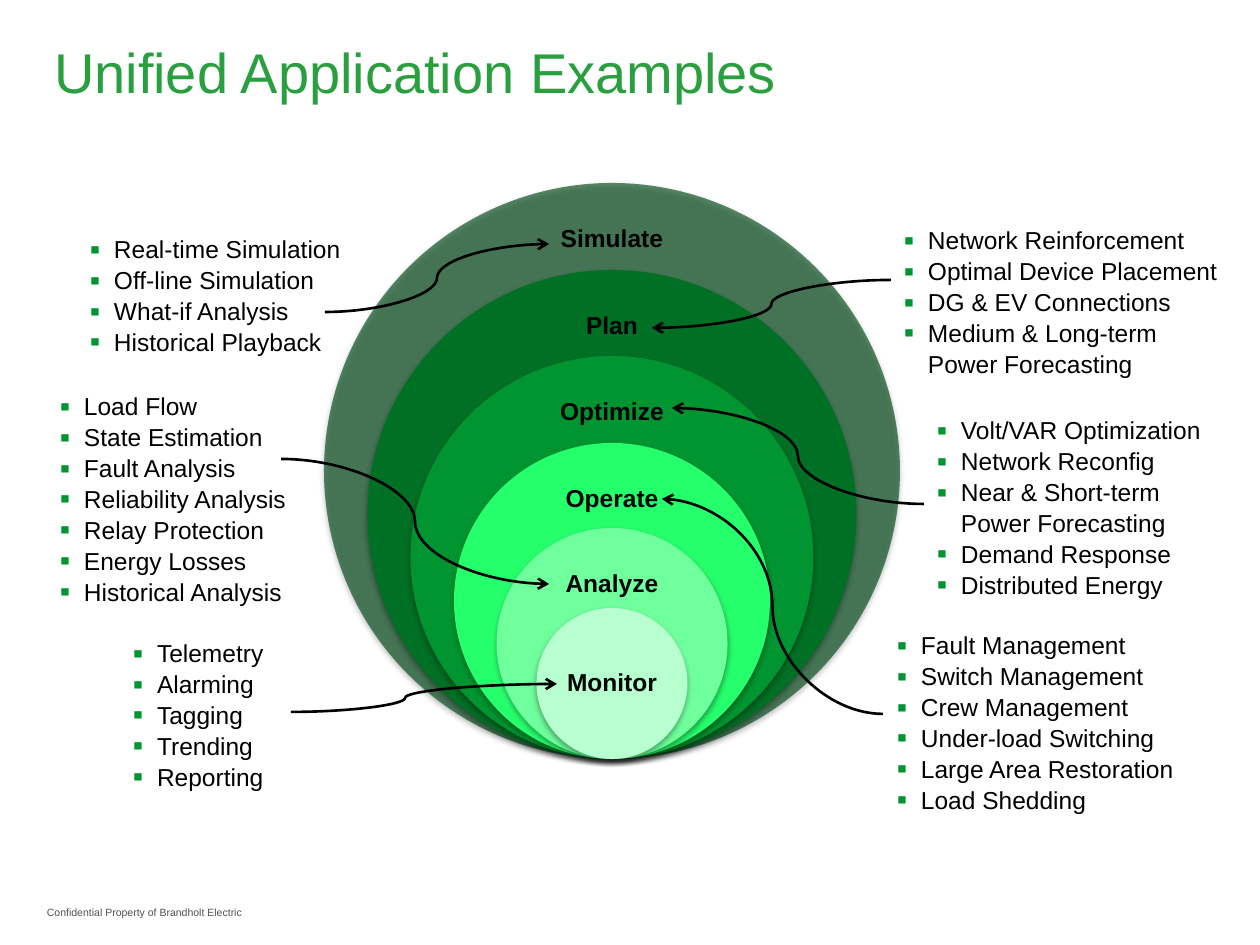
"""Build the slide of nested application circles with their example lists."""

from lxml.etree import SubElement
from pptx import Presentation
from pptx.dml.color import RGBColor
from pptx.enum.shapes import MSO_CONNECTOR, MSO_SHAPE
from pptx.enum.text import MSO_ANCHOR, PP_ALIGN
from pptx.oxml.ns import qn
from pptx.util import Pt

SCALE = 914400 / 126
COLORS = {
    "title": "299F3F", "footer": "4F5156", "text": "000000", "bullet": "009530",
    "simulate": "004A18", "plan": "007024", "optimize": "009530",
    "operate": "26FF6C", "analyze": "6FFF9D", "monitor": "B7FFCE",
}
FORMATS = {
    "title": {"size": Pt(32), "name": "Arial"},
    "footer": {"size": Pt(6), "name": "Arial"},
    "label": {"size": Pt(14), "name": "Arial", "bold": True},
    "item": {"size": Pt(14), "name": "Arial"},
}
CENTER_X, BOTTOM_Y = 612, 759
CIRCLES = [
    ("Simulate", 576, 215, 57),
    ("Plan", 489, 210, 57),
    ("Optimize", 403, 208, 57),
    ("Operate", 316, 171, 57),
    ("Analyze", 231, 150, 57),
    ("Monitor", 151, 107, 76),
]
LISTS = [
    ((47, 384, 295, 221), ["Load Flow", "State Estimation", "Fault Analysis",
                           "Reliability Analysis", "Relay Protection",
                           "Energy Losses", "Historical Analysis"]),
    ((884, 623, 364, 190), ["Fault Management", "Switch Management", "Crew Management",
                            "Under-load Switching", "Large Area Restoration",
                            "Load Shedding"]),
    ((120, 631, 171, 161), ["Telemetry", "Alarming", "Tagging", "Trending", "Reporting"]),
    ((924, 408, 291, 190), ["Volt/VAR Optimization", "Network Reconfig",
                            "Near & Short-term Power Forecasting",
                            "Demand Response", "Distributed Energy"]),
    ((891, 218, 350, 161), ["Network Reinforcement", "Optimal Device Placement",
                            "DG & EV Connections",
                            "Medium & Long-term Power Forecasting"]),
    ((77, 227, 297, 131), ["Real-time Simulation", "Off-line Simulation",
                           "What-if Analysis", "Historical Playback"]),
]
ARROWS = [
    ((281, 459, 549, 584), 50000),
    ((291, 712, 557, 684), 42900),
    ((891, 280, 652, 328), 50000),
    ((924, 504, 672, 408), 50000),
    ((325, 312, 549, 244), 50000),
    ((883, 714, 662, 499), 50000),
]


def px(*lengths):
    """Turn pixel lengths into EMU."""
    return [round(length * SCALE) for length in lengths]


def color(name):
    """Return the named colour."""
    return RGBColor.from_string(COLORS[name])


def format_font(font, style, shade):
    """Apply a named set of font values and a colour."""
    for attribute, value in FORMATS[style].items():
        setattr(font, attribute, value)
    font.color.rgb = color(shade)


def add_box(page, area, margin=0):
    """Add a wrapping text box with equal margins and return its frame."""
    frame = page.shapes.add_textbox(*px(*area)).text_frame
    frame.word_wrap = True
    for side in ("left", "top", "right", "bottom"):
        setattr(frame, f"margin_{side}", px(margin)[0])
    return frame


def add_line_of_text(page, area, text, style, shade):
    """Add a single paragraph and return its frame."""
    frame = add_box(page, area)
    paragraph = frame.paragraphs[0]
    span = paragraph.add_run()
    span.text = text
    format_font(span.font, style, shade)
    return frame


def add_circle(page, name, diameter, width, height):
    """Add a shadowed circle resting on the common bottom, with its label."""
    left, top = CENTER_X - diameter / 2, BOTTOM_Y - diameter
    circle = page.shapes.add_shape(MSO_SHAPE.OVAL, *px(left, top, diameter, diameter))
    circle.fill.solid()
    circle.fill.fore_color.rgb = color(name.lower())
    circle.line.fill.background()
    circle.shadow.inherit = False
    properties = circle._element.spPr
    if name == "Simulate":
        shade = properties.find(qn("a:solidFill")).find(qn("a:srgbClr"))
        SubElement(shade, qn("a:alpha"), val="65000")
    shadow = SubElement(properties.find(qn("a:effectLst")), qn("a:outerShdw"),
                        blurRad="40000", dist="23000", dir="5400000", rotWithShape="0")
    black = SubElement(shadow, qn("a:srgbClr"), val=COLORS["text"])
    SubElement(black, qn("a:alpha"), val="35000")

    area = (CENTER_X - width / 2, top + height / 2, width, height)
    frame = add_line_of_text(page, area, name, "label", "text")
    frame.vertical_anchor = MSO_ANCHOR.MIDDLE
    frame.paragraphs[0].alignment = PP_ALIGN.CENTER
    frame.paragraphs[0].line_spacing = 0.9


def add_bullet(paragraph):
    """Give a paragraph a hanging green square bullet."""
    indent = px(24)[0]
    properties = paragraph._p.get_or_add_pPr()
    properties.set("marL", str(indent))
    properties.set("indent", str(-indent))
    shade = SubElement(properties, qn("a:buClr"))
    SubElement(shade, qn("a:srgbClr"), val=COLORS["bullet"])
    SubElement(properties, qn("a:buSzPct"), val="120000")
    SubElement(properties, qn("a:buFont"), typeface="Arial")
    SubElement(properties, qn("a:buChar"), char="▪")


def add_list(page, area, items):
    """Add a bulleted list."""
    frame = add_box(page, area)
    frame.margin_left = frame.margin_right = px(13)[0]
    frame.margin_top = frame.margin_bottom = px(6)[0]
    for index, item in enumerate(items):
        paragraph = frame.add_paragraph() if index else frame.paragraphs[0]
        add_bullet(paragraph)
        paragraph.line_spacing = 1.05
        span = paragraph.add_run()
        span.text = item
        format_font(span.font, "item", "text")


def add_arrow(page, ends, bend):
    """Add a curved connector with an open arrowhead at its end."""
    arrow = page.shapes.add_connector(MSO_CONNECTOR.CURVE, *px(*ends))
    arrow.line.color.rgb = color("text")
    arrow.line.width = Pt(1.5)
    properties = arrow._element.spPr
    SubElement(properties.find(qn("a:ln")), qn("a:tailEnd"), type="arrow")
    SubElement(properties, qn("a:effectLst"))
    guides = properties.find(qn("a:prstGeom")).find(qn("a:avLst"))
    SubElement(guides, qn("a:gd"), name="adj1", fmla=f"val {bend}")


def main():
    """Build and save the deck."""
    deck = Presentation()
    deck.slide_width, deck.slide_height = px(1260, 945)
    page = deck.slides.add_slide(deck.slide_layouts[6])
    add_line_of_text(page, (47, 906, 238, 19),
                     "Confidential Property of Brandholt Electric", "footer", "footer")
    title = add_line_of_text(page, (54, 37, 1142, 68),
                             "Unified Application Examples", "title", "title")
    title.vertical_anchor = MSO_ANCHOR.MIDDLE
    for circle in CIRCLES:
        add_circle(page, *circle)
    for area, items in LISTS:
        add_list(page, area, items)
    for ends, bend in ARROWS:
        add_arrow(page, ends, bend)
    deck.save("out.pptx")


if __name__ == "__main__":
    main()
